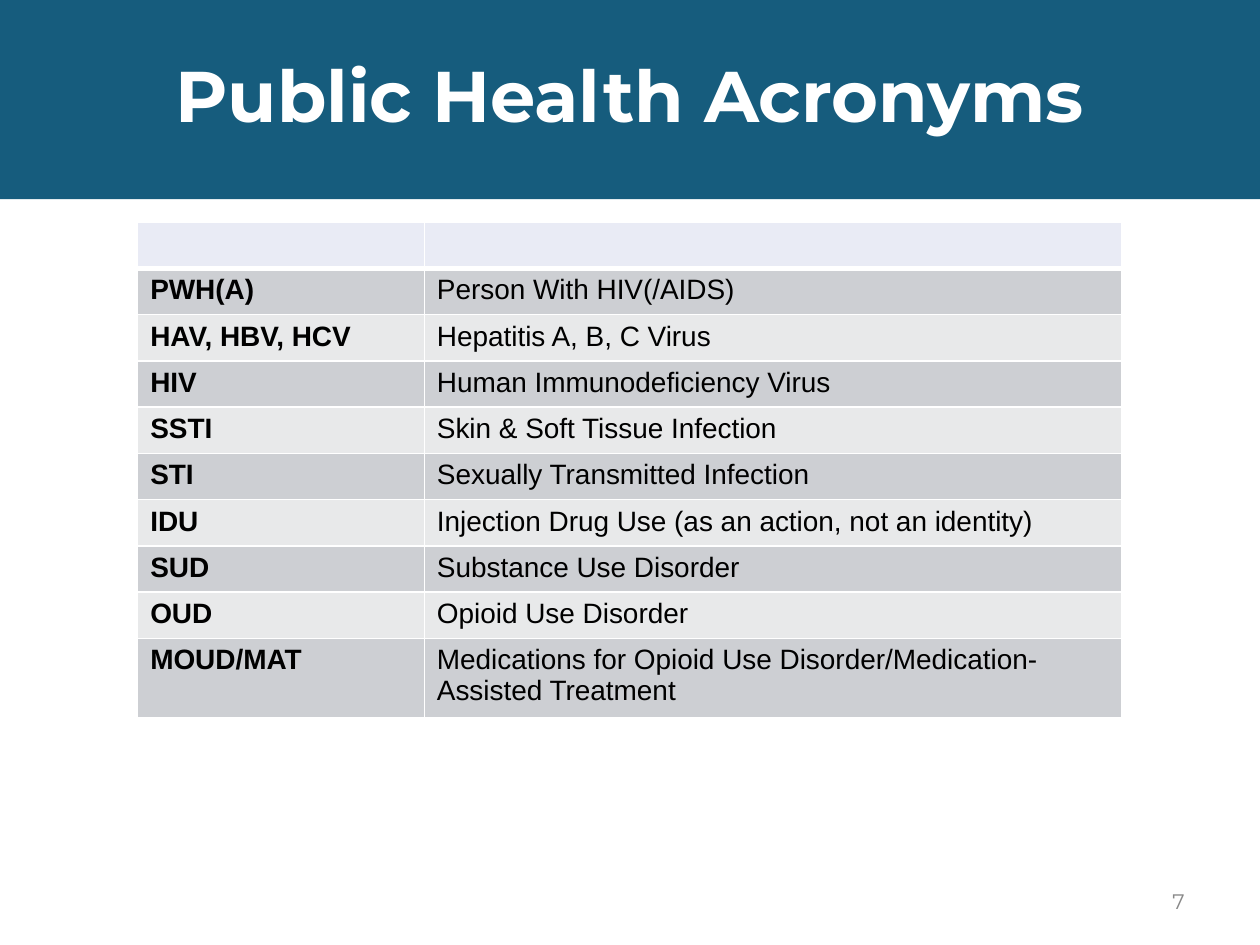
from dataclasses import dataclass

import lxml.etree
import pptx
import pptx.dml.color
import pptx.enum.shapes
import pptx.enum.text
import pptx.oxml.ns
import pptx.util

Pt = pptx.util.Pt
qn = pptx.oxml.ns.qn
ALIGN = pptx.enum.text.PP_ALIGN
MIDDLE = pptx.enum.text.MSO_ANCHOR.MIDDLE


@dataclass(frozen=True)
class Theme:
    banner: str = "165C7D"
    white: str = "FFFFFF"
    black: str = "000000"
    grey: str = "888888"
    header: str = "E9EBF5"
    bands: tuple = ("CDCFD3", "E8E9EA")
    heading_font: str = "Montserrat"
    body_font: str = "Arial"
    title_size: int = 41
    table_size: int = 16
    number_size: int = 12


ACRONYMS = [
    ("PWH(A)", "Person With HIV(/AIDS)"),
    ("HAV, HBV, HCV", "Hepatitis A, B, C Virus"),
    ("HIV", "Human Immunodeficiency Virus"),
    ("SSTI", "Skin & Soft Tissue Infection"),
    ("STI", "Sexually Transmitted Infection"),
    ("IDU", "Injection Drug Use (as an action, not an identity)"),
    ("SUD", "Substance Use Disorder"),
    ("OUD", "Opioid Use Disorder"),
    ("MOUD/MAT", "Medications for Opioid Use Disorder/Medication-Assisted Treatment"),
]


def rgb(value):
    return pptx.dml.color.RGBColor.from_string(value)


class Painter:
    def __init__(self, page, theme):
        self.page = page
        self.theme = theme

    def span(self, para, text, font, size, color, bold=False):
        span = para.add_run()
        span.text = text
        span.font.name = font
        span.font.size = Pt(size)
        span.font.color.rgb = rgb(color)
        span.font.bold = bold

    def banner(self, text, left, top, width, height):
        theme = self.theme
        box = self.page.shapes.add_shape(
            pptx.enum.shapes.MSO_SHAPE.RECTANGLE, Pt(left), Pt(top), Pt(width), Pt(height))
        box.shadow.inherit = False
        box.fill.solid()
        box.fill.fore_color.rgb = rgb(theme.banner)
        box.line.fill.background()
        box.text_frame.word_wrap = True
        box.text_frame.vertical_anchor = MIDDLE
        para = box.text_frame.paragraphs[0]
        para.alignment = ALIGN.CENTER
        para.line_spacing = 0.9
        self.span(para, text, theme.heading_font, theme.title_size, theme.white, True)

    def page_number(self, text, left, top, width, height):
        theme = self.theme
        box = self.page.shapes.add_textbox(Pt(left), Pt(top), Pt(width), Pt(height))
        box.text_frame.word_wrap = True
        box.text_frame.vertical_anchor = MIDDLE
        para = box.text_frame.paragraphs[0]
        para.alignment = ALIGN.RIGHT
        self.span(para, text, theme.heading_font, theme.number_size, theme.grey)

    def style_cell(self, cell, fill, bottom=1):
        properties = cell._tc.get_or_add_tcPr()
        for side, width in (("L", 1), ("R", 1), ("T", 1), ("B", bottom)):
            line = lxml.etree.SubElement(properties, qn(f"a:ln{side}"), w=str(Pt(width)))
            paint = lxml.etree.SubElement(line, qn("a:solidFill"))
            lxml.etree.SubElement(paint, qn("a:srgbClr"), val=self.theme.white)
        cell.fill.solid()
        cell.fill.fore_color.rgb = rgb(fill)

    def table(self, entries, left, top, widths, heights):
        theme = self.theme
        table = self.page.shapes.add_table(
            len(heights), len(widths), Pt(left), Pt(top),
            Pt(sum(widths)), Pt(sum(heights))).table
        for column, width in zip(table.columns, widths):
            column.width = Pt(width)
        for row, height in zip(table.rows, heights):
            row.height = Pt(height)

        # Empty header row, sized so that it keeps its height
        for cell in table.rows[0].cells:
            self.style_cell(cell, theme.header, bottom=3)
            para = cell.text_frame.paragraphs[0]
            lxml.etree.SubElement(
                para._p, qn("a:endParaRPr"), sz=str(theme.table_size * 100))

        # Banded body rows, acronym in bold
        for index, entry in enumerate(entries):
            for column, text in enumerate(entry):
                cell = table.cell(index + 1, column)
                self.style_cell(cell, theme.bands[index % 2])
                self.span(cell.text_frame.paragraphs[0], text, theme.body_font,
                          theme.table_size, theme.black, bold=column == 0)


def main():
    deck = pptx.Presentation()
    deck.slide_width, deck.slide_height = Pt(720), Pt(540)
    painter = Painter(deck.slides.add_slide(deck.slide_layouts[6]), Theme())

    # Title band
    painter.banner("Public Health Acronyms", 0, 0, 720, 113.8)

    # Page number
    painter.page_number("7", 516, 500.5, 168, 28.75)

    # Acronym table
    heights = [26.6] + [24.85] * (len(ACRONYMS) - 1) + [42.2]
    painter.table(ACRONYMS, 78.7, 126.8, [163.8, 398.8], heights)

    deck.save("out.pptx")


if __name__ == "__main__":
    main()
